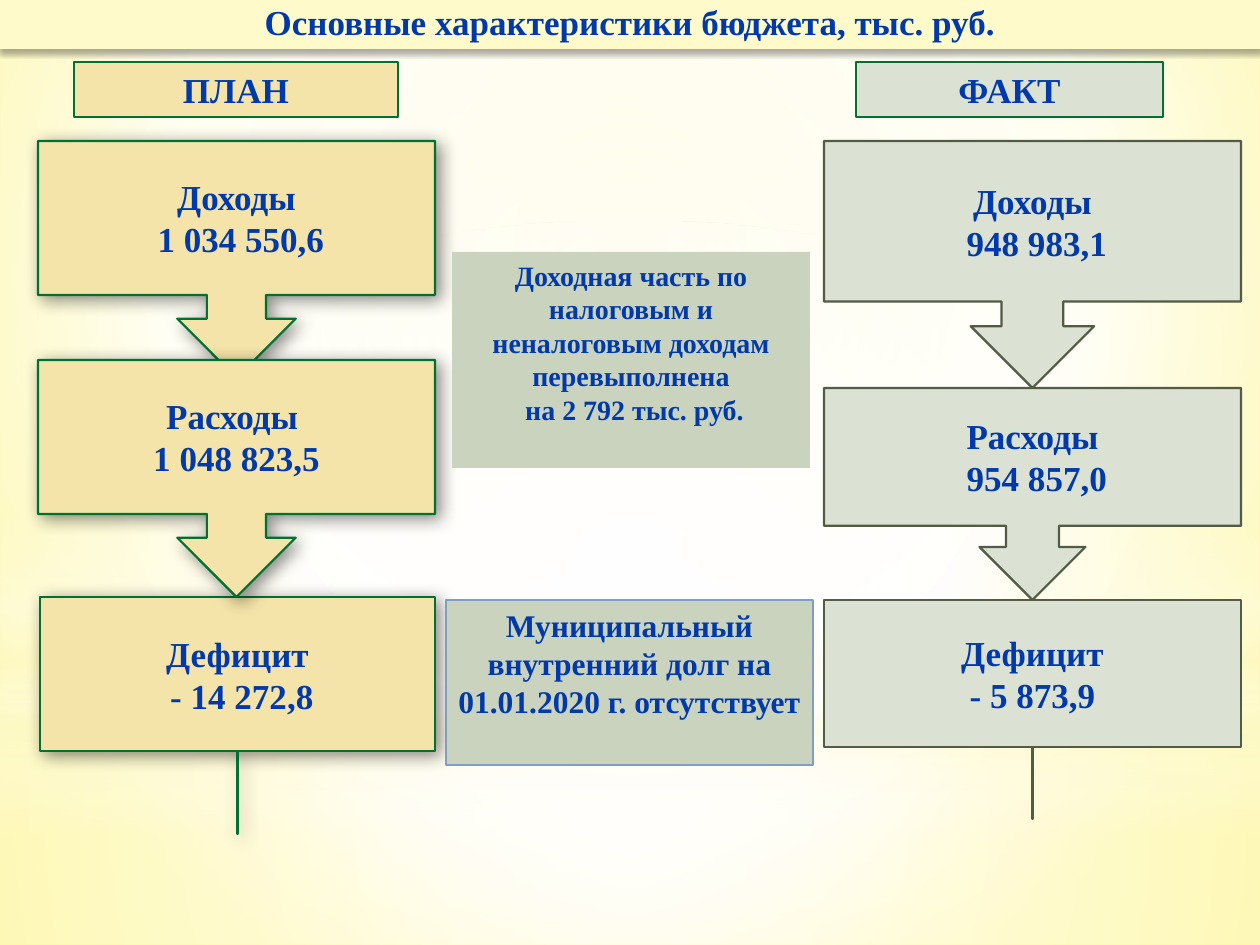
"""Build the slide comparing planned and actual budget figures."""
import pptx
import pptx.dml.color
import pptx.enum.shapes
import pptx.enum.text
import pptx.oxml
import pptx.oxml.ns
import pptx.util

PX = 914400 / 126
NS = pptx.oxml.ns.nsdecls("a")
KIND = pptx.enum.shapes.MSO_SHAPE
INK, SAND, SAGE, MOSS, GREEN, OLIVE = "0039AC", "F5E4A9", "DBE1D3", "C9D3BE", "007033", "515B45"


def colour(code):
    return pptx.dml.color.RGBColor.from_string(code)


def write(shape, text, size=20, anchor="TOP", fill=SAND, line=None, width=0.75, shadow=None):
    shape.fill.solid()
    shape.fill.fore_color.rgb = colour(fill)
    if line:
        shape.line.color.rgb = colour(line)
        shape.line.width = pptx.util.Pt(width)
    else:
        shape.line.fill.background()
    shape.shadow.inherit = False
    if shadow:
        opacity, blur, distance, angle = shadow
        effects = shape._element.spPr.find(pptx.oxml.ns.qn("a:effectLst"))
        effects.append(pptx.oxml.parse_xml(
            f'<a:outerShdw {NS} blurRad="{int(blur * 12700)}" dist="{int(distance * 12700)}" '
            f'dir="{angle * 60000}" algn="tl" rotWithShape="0"><a:srgbClr val="000000">'
            f'<a:alpha val="{opacity * 1000}"/></a:srgbClr></a:outerShdw>'))
    frame = shape.text_frame
    frame.word_wrap = True
    frame.auto_size = pptx.enum.text.MSO_AUTO_SIZE.NONE
    frame.vertical_anchor = pptx.enum.text.MSO_ANCHOR[anchor]
    frame.text = text
    for paragraph in frame.paragraphs:
        paragraph.alignment = pptx.enum.text.PP_ALIGN.CENTER
        for run in paragraph.runs:
            run.font.name = "Times New Roman"
            run.font.size = pptx.util.Pt(size)
            run.font.bold = True
            run.font.color.rgb = colour(INK)


deck = pptx.Presentation()
deck.slide_width, deck.slide_height = round(1260 * PX), round(945 * PX)
slide = deck.slides.add_slide(deck.slide_layouts[5])
master = deck.slide_master

centre = (50, 50, 50, 50)
backdrop = [
    (None, None, [(0, "FFF9B5", 100), (60, "FFFFFF", 100), (100, "FFF46F", 100)], (20, 10, 20, 60)),
    ("RECTANGLE", (0, 703, 1260, 242),
     [(0, "FFFFFF", 91), (37, "FFFFFF", 76), (100, "FEFAC9", 79)], centre),
    ("RECTANGLE", (0, 0, 1260, 703),
     [(0, "FFFFFF", 89), (48, "FFFFFF", 62), (100, "FEFAC9", 79)], centre),
    ("RECTANGLE", (0, 519, 1260, 315),
     [(0, "FFFFFF", 0), (29, "FFFFFF", 30), (45, "FEFAC9", 40),
      (55, "FFFFFF", 26), (65, "FEFAC9", 60), (100, "FFFFFF", 0)], None),
    ("OVAL", (0, 221, 1260, 703), [(0, "FFFFFF", 100), (56, "FFFFFF", 0)], centre),
]
for kind, box, stops, focus in backdrop:
    if kind:
        layer = slide.shapes.add_shape(KIND[kind], *[round(n * PX) for n in box])
        layer.line.fill.background()
        layer.shadow.inherit = False
        fill, holder = layer.fill, layer._element.spPr
        master.shapes._spTree.append(layer._element)
    else:
        fill, holder = master.background.fill, master._element
    fill.gradient()
    gradient = holder.find(".//" + pptx.oxml.ns.qn("a:gradFill"))
    marks = "".join(
        f'<a:gs pos="{place * 1000}"><a:srgbClr val="{code}"><a:alpha val="{opacity * 1000}"/>'
        f'</a:srgbClr></a:gs>' for place, code, opacity in stops)
    if focus:
        sides = " ".join(f'{side}="{n * 1000}"' for side, n in zip("ltrb", focus))
        direction = f'<a:path path="circle"><a:fillToRect {sides}/></a:path>'
    else:
        direction = '<a:lin ang="5400000" scaled="0"/>'
    gradient.getparent().replace(gradient, pptx.oxml.parse_xml(
        f'<a:gradFill {NS} rotWithShape="1"><a:gsLst>{marks}</a:gsLst>{direction}</a:gradFill>'))

heading = slide.shapes.title
heading.left, heading.top, heading.width, heading.height = [
    round(n * PX) for n in (0, -6, 1260, 55)]
write(heading, "Основные характеристики бюджета, тыс. руб.", anchor="MIDDLE",
      fill="FEFAC9", shadow=(32, 3.5, 2.2, 90))

plan = dict(anchor="MIDDLE", fill=SAND, line=GREEN, width=1.25, shadow=(45, 10, 3, 45))
fact = dict(anchor="MIDDLE", fill=SAGE, line=OLIVE, width=1.25)
stages = [
    ((38, 141, 397, 237), "Доходы\n 1 034 550,6", None, plan),
    ((824, 141, 417, 247), "Доходы\n 948 983,1", None, fact),
    ((824, 388, 417, 212), "Расходы\n 954 857,0", None, fact),
    ((824, 600, 417, 219), "Дефицит\n- 5 873,9", (0, 0, 0.28, 0.67), fact),
    ((40, 597, 395, 237), "Дефицит\n - 14 272,8", (0.25, 0, 0.25, 0.65), plan),
    ((38, 360, 397, 237), "Расходы \n1 048 823,5", None, plan),
]
for box, text, arrow, look in stages:
    stage = slide.shapes.add_shape(KIND.DOWN_ARROW_CALLOUT, *[round(n * PX) for n in box])
    for index, ratio in enumerate(arrow or ()):
        stage.adjustments[index] = ratio
    write(stage, text, **look)

labels = [
    ((74, 62, 324, 55), "ПЛАН", dict(fill=SAND, line=GREEN)),
    ((856, 62, 307, 55), "ФАКТ", dict(fill=SAGE, line=GREEN)),
    ((452, 252, 358, 216),
     "Доходная часть по налоговым и неналоговым доходам перевыполнена\n на 2 792 тыс. руб.",
     dict(size=16, fill=MOSS)),
    ((446, 600, 367, 165), "Муниципальный внутренний долг на 01.01.2020 г. отсутствует",
     dict(size=18, fill=MOSS, line="809EC2")),
]
for box, text, look in labels:
    label = slide.shapes.add_shape(KIND.RECTANGLE, *[round(n * PX) for n in box])
    write(label, text, **look)

deck.save("out.pptx")
